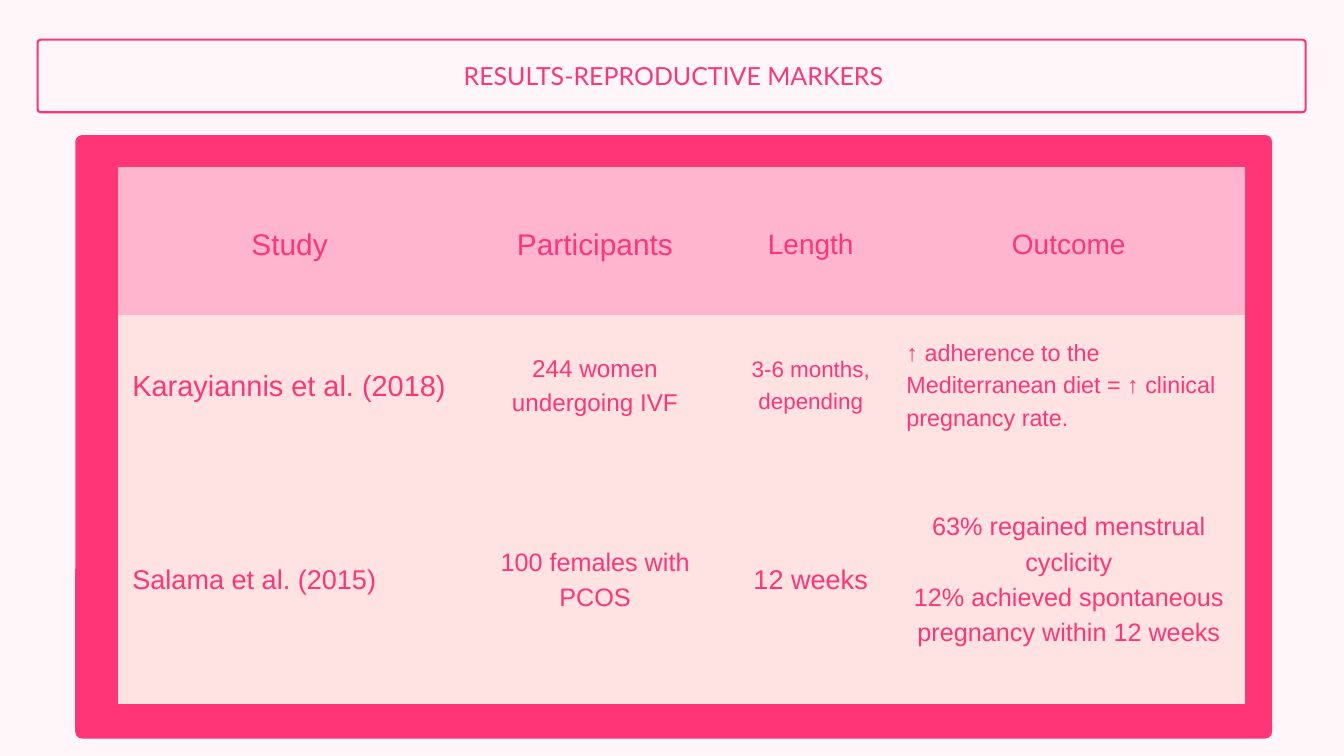
from pptx import Presentation
from pptx.dml.color import RGBColor
from pptx.enum import shapes, text
from pptx.util import Inches, Pt

PINK, ROSE, BLUSH, PAPER = "FF3578", "FFB5CE", "FFE3E3", "FFF6F9"
LEFT, CENTER = text.PP_ALIGN.LEFT, text.PP_ALIGN.CENTER
NO_GRID_STYLE = "{2D5ABB26-0587-4C30-8999-92F81FD0307C}"

COLUMN_WIDTHS = [5.1, 3.99, 2.43, 5.25]
ROW_HEIGHTS = [2.2, 2, 3.78]
# Each cell: paragraphs, font size, alignment
STUDIES = [
    [(["Study"], 32, CENTER), (["Participants"], 32, CENTER),
     (["Length"], 30, CENTER), (["Outcome"], 30, CENTER)],
    [(["Karayiannis et al. (2018)"], 31, LEFT),
     (["244 women undergoing IVF"], 26, CENTER),
     (["3-6 months, depending"], 24, CENTER),
     (["↑ adherence to the Mediterranean diet = ↑ clinical pregnancy rate."], 25, LEFT)],
    [(["Salama et al. (2015)"], 29, LEFT),
     (["100 females with PCOS"], 27, CENTER),
     (["12 weeks"], 29, CENTER),
     (["63% regained menstrual cyclicity",
       "12% achieved spontaneous pregnancy within 12 weeks"], 27, CENTER)],
]


def color(hex_string):
    return RGBColor.from_string(hex_string)


def write(frame, lines, size, font="Arial", align=CENTER, ink=PINK, leading=1.4):
    """Fill a text frame, one paragraph a line; leading is a multiple of size."""
    frame.word_wrap = True
    for index, line in enumerate(lines):
        paragraph = frame.paragraphs[0] if index == 0 else frame.add_paragraph()
        paragraph.alignment = align
        paragraph.line_spacing = Pt(round(size * leading, 1))
        run = paragraph.add_run()
        run.text = line
        run.font.name, run.font.size = font, Pt(size)
        run.font.color.rgb = color(ink)


def rounded_box(slide, box, radius, fill=None, line=None):
    left, top, width, height = box
    panel = slide.shapes.add_shape(
        shapes.MSO_SHAPE.ROUNDED_RECTANGLE, *map(Inches, box))
    panel.adjustments[0] = radius / min(width, height)
    panel.shadow.inherit = False
    if fill:
        panel.fill.solid()
        panel.fill.fore_color.rgb = color(fill)
    else:
        panel.fill.background()
    if line:
        panel.line.color.rgb = color(line)
        panel.line.width = Pt(2.25)
    else:
        panel.line.fill.background()


def title_bar(slide, box):
    left, top, width, height = box
    rounded_box(slide, box, radius=0.05, line=PINK)
    title_width, title_height = 8.79, 0.52
    title = slide.shapes.add_textbox(
        Inches(left + (width - title_width) / 2 + 0.03),
        Inches(top + 0.23), Inches(title_width), Inches(title_height))
    frame = title.text_frame
    frame.margin_left = frame.margin_right = frame.margin_top = frame.margin_bottom = 0
    write(frame, ["RESULTS-REPRODUCTIVE MARKERS"], 26.7, font="Lato")


def study_table(slide, box):
    left, top, width, height = box
    rounded_box(slide, box, radius=0.1, fill=PINK)
    holder = slide.shapes.add_table(
        len(ROW_HEIGHTS), len(COLUMN_WIDTHS),
        Inches(left + 0.64), Inches(top + 0.48),
        Inches(sum(COLUMN_WIDTHS)), Inches(sum(ROW_HEIGHTS)))
    table = holder.table
    table.first_row = table.horz_banding = False
    table._tbl.tblPr[0].text = NO_GRID_STYLE
    for column, column_width in zip(table.columns, COLUMN_WIDTHS):
        column.width = Inches(column_width)
    for r, (row, row_height) in enumerate(zip(table.rows, ROW_HEIGHTS)):
        row.height = Inches(row_height)
        for cell, (lines, size, align) in zip(row.cells, STUDIES[r]):
            cell.fill.solid()
            cell.fill.fore_color.rgb = color(BLUSH if r else ROSE)
            cell.vertical_anchor = text.MSO_ANCHOR.MIDDLE
            cell.margin_left = cell.margin_right = Inches(0.21)
            cell.margin_top = cell.margin_bottom = Inches(0.21)
            write(cell.text_frame, lines, size, align=align)


def main():
    deck = Presentation()
    deck.slide_width, deck.slide_height = Inches(20), Inches(11.25)
    slide = deck.slides.add_slide(deck.slide_layouts[6])
    slide.background.fill.solid()
    slide.background.fill.fore_color.rgb = color(PAPER)
    title_bar(slide, (0.56, 0.59, 18.87, 1.08))
    study_table(slide, (1.12, 2.01, 17.81, 8.98))
    deck.save("out.pptx")


if __name__ == "__main__":
    main()
